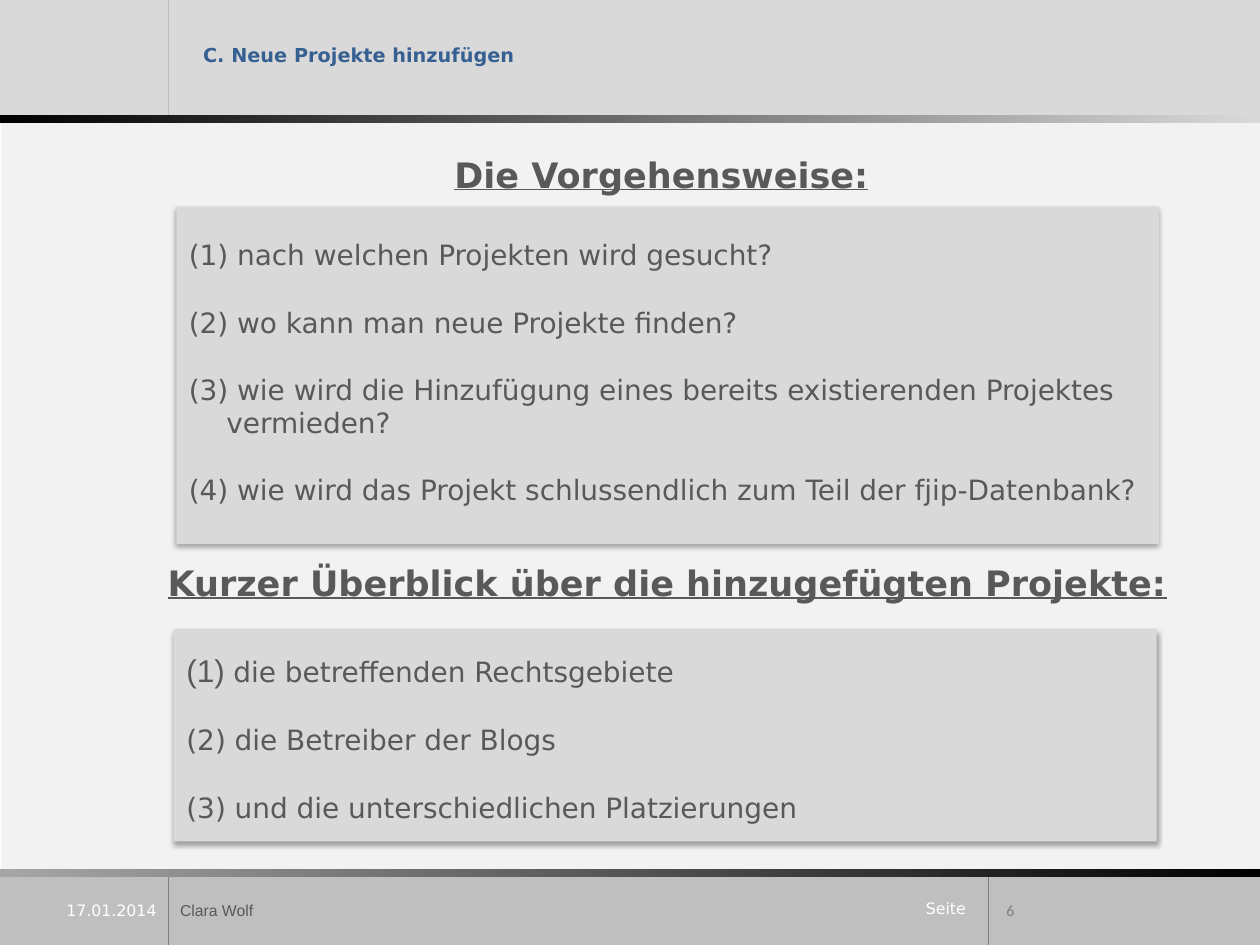
from lxml import etree
from pptx import Presentation
from pptx.dml.color import RGBColor
from pptx.enum.shapes import MSO_CONNECTOR, MSO_SHAPE
from pptx.enum.text import MSO_ANCHOR, PP_ALIGN
from pptx.oxml.ns import qn
from pptx.util import Pt

RECTANGLE = MSO_SHAPE.RECTANGLE
STRAIGHT = MSO_CONNECTOR.STRAIGHT
TOP, MIDDLE = MSO_ANCHOR.TOP, MSO_ANCHOR.MIDDLE
LEFT, CENTER, RIGHT = PP_ALIGN.LEFT, PP_ALIGN.CENTER, PP_ALIGN.RIGHT

BLACK = RGBColor(0x00, 0x00, 0x00)
WHITE = RGBColor(0xFF, 0xFF, 0xFF)
BLUE = RGBColor(0x37, 0x60, 0x92)
TEXT_GREY = RGBColor(0x59, 0x59, 0x59)
NUMBER_GREY = RGBColor(0x7F, 0x7F, 0x7F)
LINE_GREY = RGBColor(0x80, 0x80, 0x80)
STRIPE_GREY = RGBColor(0xA6, 0xA6, 0xA6)
FOOTER_GREY = RGBColor(0xBF, 0xBF, 0xBF)
PANEL_GREY = RGBColor(0xD9, 0xD9, 0xD9)
BODY_GREY = RGBColor(0xF2, 0xF2, 0xF2)

WIDTH, HEIGHT = 720, 540
HEADER_BOTTOM = 66.5
FOOTER_TOP = 499
LEFT_RULE, RIGHT_RULE = 96.5, 564.8


class SlideBuilder:
    font = "DejaVu Sans"
    item_size = 16
    item_gap = 19.2
    item_indent = 21.5

    def __init__(self, slide):
        self.slide = slide

    def box(self, left, top, width, height, color):
        shape = self.slide.shapes.add_shape(
            RECTANGLE, Pt(left), Pt(top), Pt(width), Pt(height))
        shape.shadow.inherit = False
        shape.line.fill.background()
        shape.fill.solid()
        shape.fill.fore_color.rgb = color
        return shape

    def stripe(self, top, start, end):
        fill = self.box(0, top, WIDTH, 4.5, start).fill
        fill.gradient()
        fill.gradient_angle = 0
        for stop, color in zip(fill.gradient_stops, (start, end)):
            stop.color.rgb = color

    def rule(self, x, top, bottom, color):
        connector = self.slide.shapes.add_connector(
            STRAIGHT, Pt(x), Pt(top), Pt(x), Pt(bottom))
        connector.line.color.rgb = color
        connector.line.width = Pt(0.5)
        etree.SubElement(connector._element.spPr, qn("a:effectLst"))

    def style(self, font, size, color, name=None):
        font.name = name or self.font
        font.size = Pt(size)
        font.color.rgb = color

    def label(self, left, top, width, height, text, size, color,
              name=None, align=LEFT, anchor=TOP, bold=False, underline=False):
        shape = self.slide.shapes.add_textbox(
            Pt(left), Pt(top), Pt(width), Pt(height))
        frame = shape.text_frame
        frame.word_wrap = True
        frame.vertical_anchor = anchor
        frame.text = text
        paragraph = frame.paragraphs[0]
        paragraph.alignment = align
        font = paragraph.runs[0].font
        self.style(font, size, color, name)
        font.bold = bold
        font.underline = underline

    def heading(self, left, top, width, text):
        self.label(left, top, width, 32, text, 20, TEXT_GREY,
                   align=CENTER, bold=True, underline=True)

    def add_shadow(self, shape):
        effects = shape._element.spPr.find(qn("a:effectLst"))
        shadow = etree.SubElement(
            effects, qn("a:outerShdw"), blurRad=str(Pt(3.1)),
            dist=str(Pt(1.8)), dir="5400000", rotWithShape="0")
        color = etree.SubElement(shadow, qn("a:srgbClr"), val=str(BLACK))
        etree.SubElement(color, qn("a:alpha"), val="35000")

    def number(self, paragraph):
        properties = paragraph._p.get_or_add_pPr()
        properties.set("marL", str(Pt(self.item_indent)))
        properties.set("indent", str(-Pt(self.item_indent)))
        etree.SubElement(properties, qn("a:buAutoNum"), type="arabicParenBoth")

    def panel(self, left, top, height, inset, items, first_number=None):
        """Numbered list; first_number is the font and size of number one."""
        shape = self.box(left, top, 561.6, height, PANEL_GREY)
        self.add_shadow(shape)
        frame = shape.text_frame
        frame.word_wrap = True
        frame.vertical_anchor = TOP
        frame.margin_top = Pt(inset)
        for index, item in enumerate(items):
            paragraph = frame.add_paragraph() if index else frame.paragraphs[0]
            self.number(paragraph)
            paragraph.alignment = LEFT
            if index:
                paragraph.space_before = Pt(self.item_gap)
            # The space after the number carries the number's font
            for text in (" ", item):
                run = paragraph.add_run()
                run.text = text
                self.style(run.font, self.item_size, TEXT_GREY)
            if first_number and index == 0:
                name, size = first_number
                self.style(paragraph.runs[0].font, size, TEXT_GREY, name)


def main():
    presentation = Presentation()
    presentation.slide_width = Pt(WIDTH)
    presentation.slide_height = Pt(HEIGHT)
    slide = presentation.slides.add_slide(presentation.slide_layouts[6])
    builder = SlideBuilder(slide)

    # Background bands, rules and stripes
    builder.box(0, 0, WIDTH, HEADER_BOTTOM, PANEL_GREY)
    builder.box(0.5, HEADER_BOTTOM, WIDTH - 0.5, 431, BODY_GREY)
    builder.box(0, FOOTER_TOP, WIDTH, HEIGHT - FOOTER_TOP, FOOTER_GREY)
    builder.rule(LEFT_RULE, 0, HEADER_BOTTOM, FOOTER_GREY)
    for x in (LEFT_RULE, RIGHT_RULE):
        builder.rule(x, FOOTER_TOP, HEIGHT, LINE_GREY)
    builder.stripe(66, BLACK, PANEL_GREY)
    builder.stripe(496.7, STRIPE_GREY, BLACK)

    # Header
    builder.label(109, 21, 215, 24, "C. Neue Projekte hinzufügen", 11, BLUE,
                  bold=True)

    # Procedure
    builder.heading(93, 84, 570, "Die Vorgehensweise:")
    builder.panel(100.8, 118.3, 192.7, 17.7, [
        "nach welchen Projekten wird gesucht?",
        "wo kann man neue Projekte finden?",
        "wie wird die Hinzufügung eines bereits existierenden Projektes "
        "vermieden?",
        "wie wird das Projekt schlussendlich zum Teil der fjip-Datenbank?",
    ])

    # Overview of the added projects
    builder.heading(86.4, 317.5, 589.7,
                    "Kurzer Überblick über die hinzugefügten Projekte:")
    builder.panel(99.4, 359.3, 121.5, 13, [
        "die betreffenden Rechtsgebiete",
        "die Betreiber der Blogs",
        "und die unterschiedlichen Platzierungen",
    ], first_number=("Arial", 18))

    # Footer
    builder.label(24, 506, 72.5, 28, "17.01.2014", 9, WHITE,
                  align=RIGHT, anchor=MIDDLE)
    builder.label(95.8, 505.5, 426, 28.8, "Clara Wolf", 9, TEXT_GREY,
                  name="Arial", anchor=MIDDLE)
    builder.label(522, 510, 41, 18, "Seite", 9, WHITE)
    builder.label(568, 505.5, 116, 28.8, "6", 9, NUMBER_GREY,
                  name="Calibri", anchor=MIDDLE)

    presentation.save("out.pptx")


if __name__ == "__main__":
    main()
